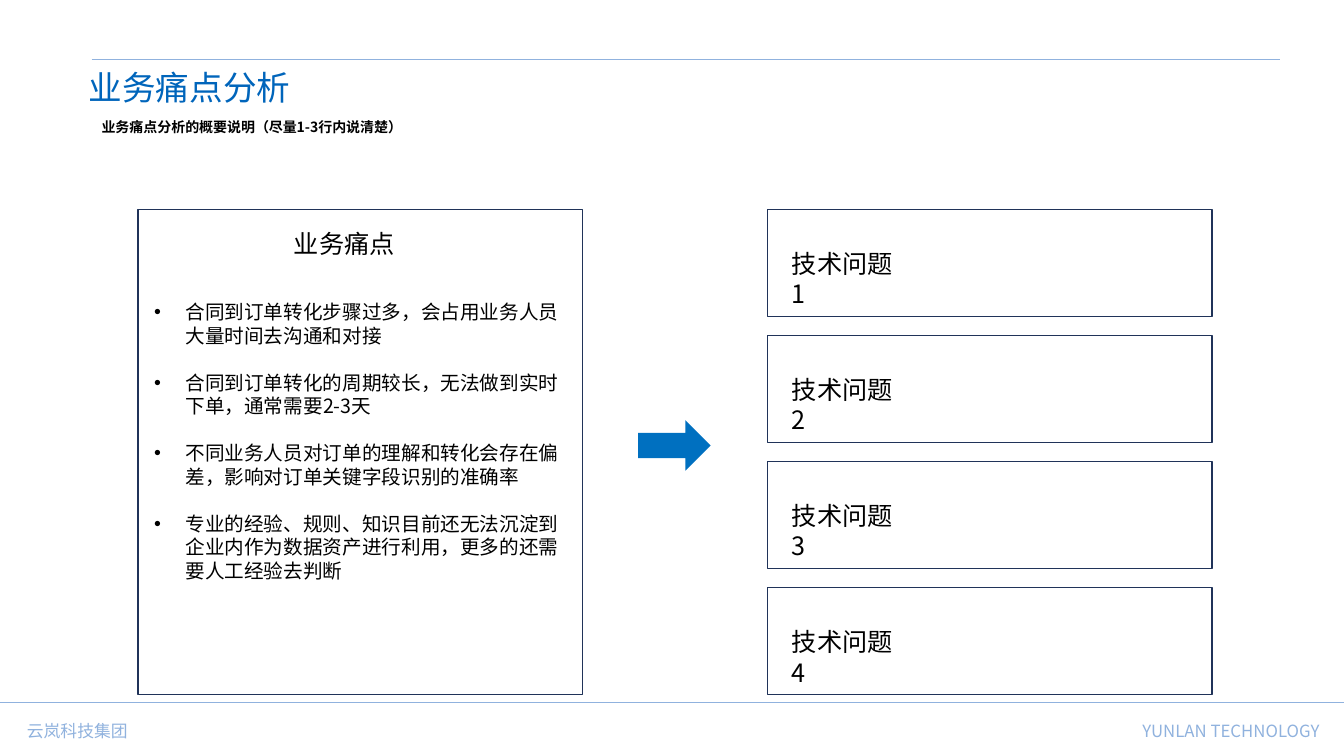
"""Build a slide that leads from business pain points to technical problems."""
from dataclasses import dataclass

from lxml import etree
from pptx import Presentation
from pptx.dml.color import RGBColor
from pptx.enum.shapes import MSO_CONNECTOR, MSO_SHAPE
from pptx.enum.text import MSO_ANCHOR, MSO_AUTO_SIZE, PP_ALIGN
from pptx.oxml.ns import qn
from pptx.util import Cm, Pt

RECTANGLE = MSO_SHAPE.RECTANGLE
RIGHT_ARROW = MSO_SHAPE.RIGHT_ARROW
STRAIGHT = MSO_CONNECTOR.STRAIGHT
TOP = MSO_ANCHOR.TOP
NO_AUTOFIT = MSO_AUTO_SIZE.NONE
LEFT, RIGHT = PP_ALIGN.LEFT, PP_ALIGN.RIGHT


@dataclass(frozen=True)
class Theme:
    """Colours, type sizes and font of the slide."""
    font: str = "Noto Sans CJK SC"
    title_color: RGBColor = RGBColor(0x00, 0x65, 0xBB)
    text_color: RGBColor = RGBColor(0x00, 0x00, 0x00)
    pale_color: RGBColor = RGBColor(0x90, 0xB2, 0xDE)
    border_color: RGBColor = RGBColor(0x20, 0x33, 0x59)
    arrow_color: RGBColor = RGBColor(0x00, 0x70, 0xC0)
    title_size: int = 24
    heading_size: int = 18
    body_size: int = 14
    footer_size: int = 12
    summary_size: int = 10
    line_factor: float = 1.2
    line_width: int = 1


THEME = Theme()

PAIN_POINTS = [
    "合同到订单转化步骤过多，会占用业务人员大量时间去沟通和对接",
    "合同到订单转化的周期较长，无法做到实时下单，通常需要2-3天",
    "不同业务人员对订单的理解和转化会存在偏差，影响对订单关键字段识别的准确率",
    "专业的经验、规则、知识目前还无法沉淀到企业内作为数据资产进行利用，更多的还需要人工经验去判断",
]
PROBLEM_COUNT = 4
PANEL_TOP, PANEL_WIDTH, PANEL_HEIGHT = 5.28, 11.2, 12.22
PAIN_LEFT, PROBLEM_LEFT = 3.48, 19.35
PROBLEM_HEIGHT = 2.69
PROBLEM_PITCH = (PANEL_HEIGHT - PROBLEM_HEIGHT) / (PROBLEM_COUNT - 1)


def place(shape, left, top, width, height):
    """Move and size a shape in centimetres."""
    shape.left, shape.top = Cm(left), Cm(top)
    shape.width, shape.height = Cm(width), Cm(height)


def add_bullet(paragraph):
    """Give a paragraph a hanging round bullet."""
    properties = paragraph._p.get_or_add_pPr()
    indent = Cm(0.79)
    properties.set("marL", str(indent))
    properties.set("indent", str(-indent))
    etree.SubElement(properties, qn("a:buFont")).set("typeface", "Arial")
    etree.SubElement(properties, qn("a:buChar")).set("char", "•")


def write_text(shape, lines, size, color, align=LEFT, bold=False, bullets=False):
    """Fill a text shape with evenly formatted paragraphs."""
    frame = shape.text_frame
    frame.word_wrap = True
    frame.auto_size = NO_AUTOFIT
    frame.vertical_anchor = TOP
    frame.margin_top = Cm(0.17)
    frame.text = "\n".join(lines)
    line_height = Pt(size * THEME.line_factor)
    for index, paragraph in enumerate(frame.paragraphs):
        paragraph.alignment = align
        paragraph.line_spacing = line_height
        paragraph.space_before = line_height if index else Pt(0)
        paragraph.space_after = Pt(0)
        if bullets:
            add_bullet(paragraph)
        font = paragraph.font
        font.size = Pt(size)
        font.bold = bold
        font.color.rgb = color
        font.name = THEME.font
        defaults = paragraph._p.pPr.find(qn("a:defRPr"))
        etree.SubElement(defaults, qn("a:ea")).set("typeface", THEME.font)


def add_label(slide, text, box, size, color=THEME.text_color, align=LEFT, bold=False):
    """Add a text box with one paragraph."""
    label = slide.shapes.add_textbox(*map(Cm, box))
    write_text(label, [text], size, color, align, bold)


def add_rule(slide, left, right, top):
    """Add a pale horizontal line."""
    rule = slide.shapes.add_connector(STRAIGHT, Cm(left), Cm(top), Cm(right), Cm(top))
    rule.line.color.rgb = THEME.pale_color
    rule.line.width = Pt(THEME.line_width)
    etree.SubElement(rule._element.spPr, qn("a:effectLst"))


def add_frame(slide, left, top, width, height):
    """Add an unfilled rectangle with a dark border."""
    frame = slide.shapes.add_shape(RECTANGLE, Cm(left), Cm(top), Cm(width), Cm(height))
    frame.shadow.inherit = False
    frame.fill.background()
    frame.line.color.rgb = THEME.border_color
    frame.line.width = Pt(THEME.line_width)


def add_arrow(slide, left, top, width, height):
    """Add a solid arrow pointing right."""
    arrow = slide.shapes.add_shape(RIGHT_ARROW, Cm(left), Cm(top), Cm(width), Cm(height))
    arrow.shadow.inherit = False
    arrow.fill.solid()
    arrow.fill.fore_color.rgb = THEME.arrow_color
    arrow.line.fill.background()


def add_problem(slide, number):
    """Add one framed technical problem of the right column."""
    top = PANEL_TOP + (number - 1) * PROBLEM_PITCH
    add_frame(slide, PROBLEM_LEFT, top, PANEL_WIDTH, PROBLEM_HEIGHT)
    box = (PROBLEM_LEFT + 0.36, top + 0.81, 3.25, 1.7)
    add_label(slide, f"技术问题{number}", box, THEME.heading_size)


def add_footer(slide):
    """Add the footer line and the company name in both languages."""
    add_rule(slide, 0, 33.87, 17.7)
    for text, left, width, align in (
        ("云岚科技集团", 0.43, 9.58, LEFT),
        ("YUNLAN TECHNOLOGY", 26.37, 7.14, RIGHT),
    ):
        box = (left, 17.98, width, 0.76)
        add_label(slide, text, box, THEME.footer_size, THEME.pale_color, align)


def main():
    """Build and save the presentation."""
    presentation = Presentation()
    presentation.slide_width, presentation.slide_height = Cm(33.87), Cm(19.05)
    slide = presentation.slides.add_slide(presentation.slide_layouts[1])
    title, pain_list = slide.placeholders

    place(title, 1.98, 1.52, 28.32, 1.27)
    write_text(title, ["业务痛点分析"], THEME.title_size, THEME.title_color)
    add_rule(slide, 2.31, 32.26, 1.5)
    add_label(slide, "业务痛点分析的概要说明（尽量1-3行内说清楚）",
              (2.31, 2.82, 29.92, 0.69), THEME.summary_size, bold=True)

    add_frame(slide, PAIN_LEFT, PANEL_TOP, PANEL_WIDTH, PANEL_HEIGHT)
    add_label(slide, "业务痛点", (7.16, 5.59, 3.2, 1.02), THEME.heading_size)
    place(pain_list, 3.63, 7.39, 10.9, 8.28)
    write_text(pain_list, PAIN_POINTS, THEME.body_size, THEME.text_color, bullets=True)

    add_arrow(slide, 16.08, 10.59, 1.83, 1.27)
    for number in range(1, PROBLEM_COUNT + 1):
        add_problem(slide, number)
    add_footer(slide)
    presentation.save("out.pptx")


if __name__ == "__main__":
    main()
